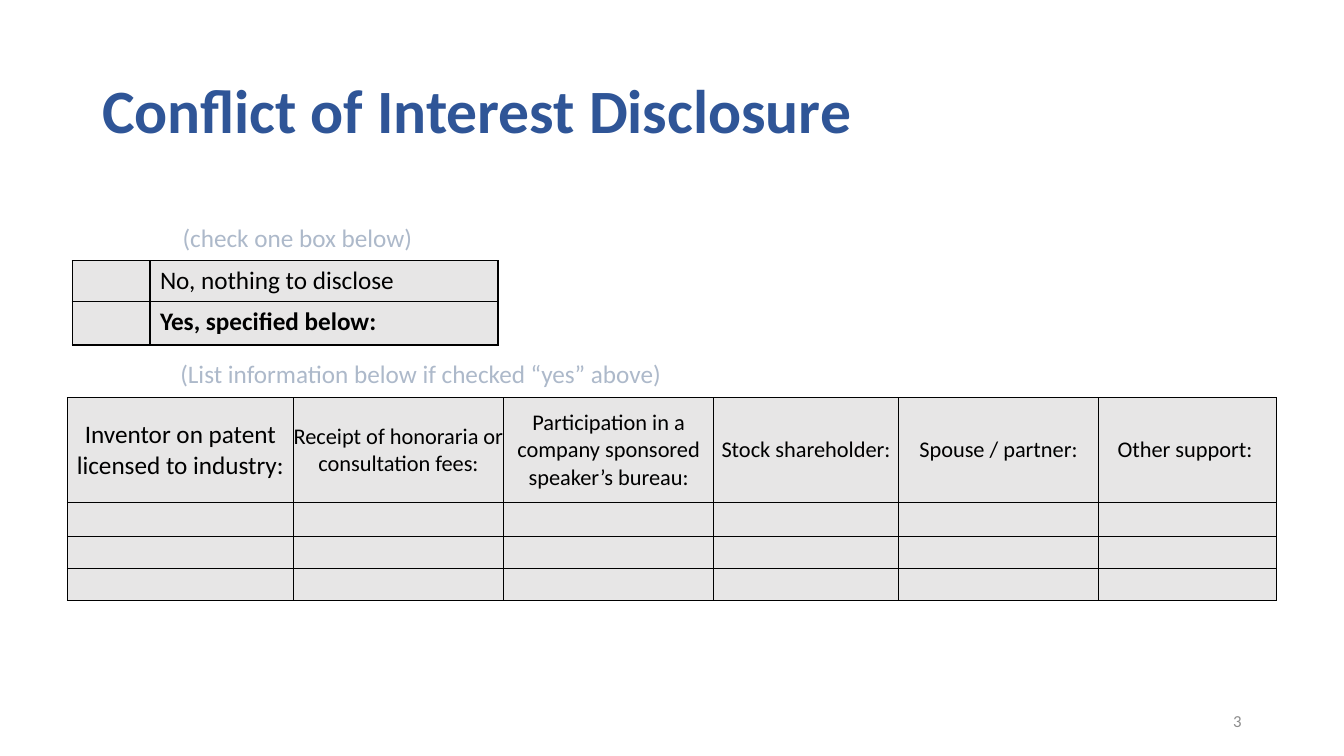
"""Build a conflict of interest disclosure slide with two form tables."""
import lxml.etree
import pptx
import pptx.dml.color
import pptx.enum.text
import pptx.oxml.ns
import pptx.util

Pt = pptx.util.Pt
ALIGN = pptx.enum.text.PP_ALIGN
ANCHOR = pptx.enum.text.MSO_ANCHOR
BLACK = pptx.dml.color.RGBColor(0x00, 0x00, 0x00)
TITLE_BLUE = pptx.dml.color.RGBColor(0x2F, 0x55, 0x97)
HINT_BLUE = pptx.dml.color.RGBColor(0xAD, 0xB9, 0xCA)
NUMBER_GRAY = pptx.dml.color.RGBColor(0x8C, 0x8C, 0x8C)
CELL_GRAY = pptx.dml.color.RGBColor(0xE7, 0xE6, 0xE6)


def write_text(frame, text, size=18, color=BLACK, bold=False, align=ALIGN.LEFT, spacing=1.0):
    frame.word_wrap = True
    paragraph = frame.paragraphs[0]
    paragraph.alignment = align
    paragraph.line_spacing = spacing
    run = paragraph.add_run()
    run.text = text
    run.font.name = "Calibri"
    run.font.size = Pt(size)
    run.font.bold = bold
    run.font.color.rgb = color


def add_grid(left, top, widths, heights):
    frame = slide.shapes.add_table(
        len(heights), len(widths), Pt(left), Pt(top), Pt(sum(widths)), Pt(sum(heights)))
    table = frame.table
    for column, width in zip(table.columns, widths):
        column.width = Pt(width)
    for row, height in zip(table.rows, heights):
        row.height = Pt(height)
    for cell in table.iter_cells():
        properties = cell._tc.get_or_add_tcPr()
        for side in ("a:lnL", "a:lnR", "a:lnT", "a:lnB"):
            line = lxml.etree.SubElement(properties, pptx.oxml.ns.qn(side), w=str(Pt(1)))
            fill = lxml.etree.SubElement(line, pptx.oxml.ns.qn("a:solidFill"))
            lxml.etree.SubElement(fill, pptx.oxml.ns.qn("a:srgbClr"), val=str(BLACK))
        cell.fill.solid()
        cell.fill.fore_color.rgb = CELL_GRAY
    return table


presentation = pptx.Presentation()
presentation.slide_width = Pt(960)
presentation.slide_height = Pt(540)
slide = presentation.slides.add_slide(presentation.slide_layouts[6])

title = slide.shapes.add_textbox(Pt(66), Pt(28.75), Pt(828), Pt(104.4))
title.text_frame.vertical_anchor = ANCHOR.MIDDLE
write_text(title.text_frame, "Conflict of Interest Disclosure",
           size=44, color=TITLE_BLUE, bold=True, spacing=0.9)

choices = add_grid(51.5, 186.2, [55.6, 248.6], [29.2, 31])
write_text(choices.cell(0, 1).text_frame, "No, nothing to disclose")
write_text(choices.cell(1, 1).text_frame, "Yes, specified below:", bold=True)

details = add_grid(48.2, 284, [161.3, 150.3, 150, 132, 143, 127.2], [75, 24, 23, 23])
for cell in details.iter_cells():
    cell.margin_left = cell.margin_right = cell.margin_top = cell.margin_bottom = 0
    cell.vertical_anchor = ANCHOR.MIDDLE
headings = [
    ("Inventor on patent licensed to industry:", 18),
    ("Receipt of honoraria or consultation fees:", 16),
    ("Participation in a company sponsored speaker’s bureau:", 16),
    ("Stock shareholder:", 16),
    ("Spouse / partner:", 16),
    ("Other support: ", 16),
]
for column, (heading, size) in enumerate(headings):
    write_text(details.cell(0, column).text_frame, heading, size=size, align=ALIGN.CENTER)

slide_number = slide.shapes.add_textbox(Pt(678), Pt(500.5), Pt(216), Pt(28.75))
slide_number.text_frame.vertical_anchor = ANCHOR.MIDDLE
write_text(slide_number.text_frame, "3", size=12, color=NUMBER_GRAY, align=ALIGN.RIGHT)

hints = [
    ("(check one box below)", 123.3, 155, 181),
    ("(List information below if checked “yes” above)", 121.7, 252.5, 362),
]
for hint, left, top, width in hints:
    hint_box = slide.shapes.add_textbox(Pt(left), Pt(top), Pt(width), Pt(29))
    write_text(hint_box.text_frame, hint, color=HINT_BLUE)

presentation.save("out.pptx")
